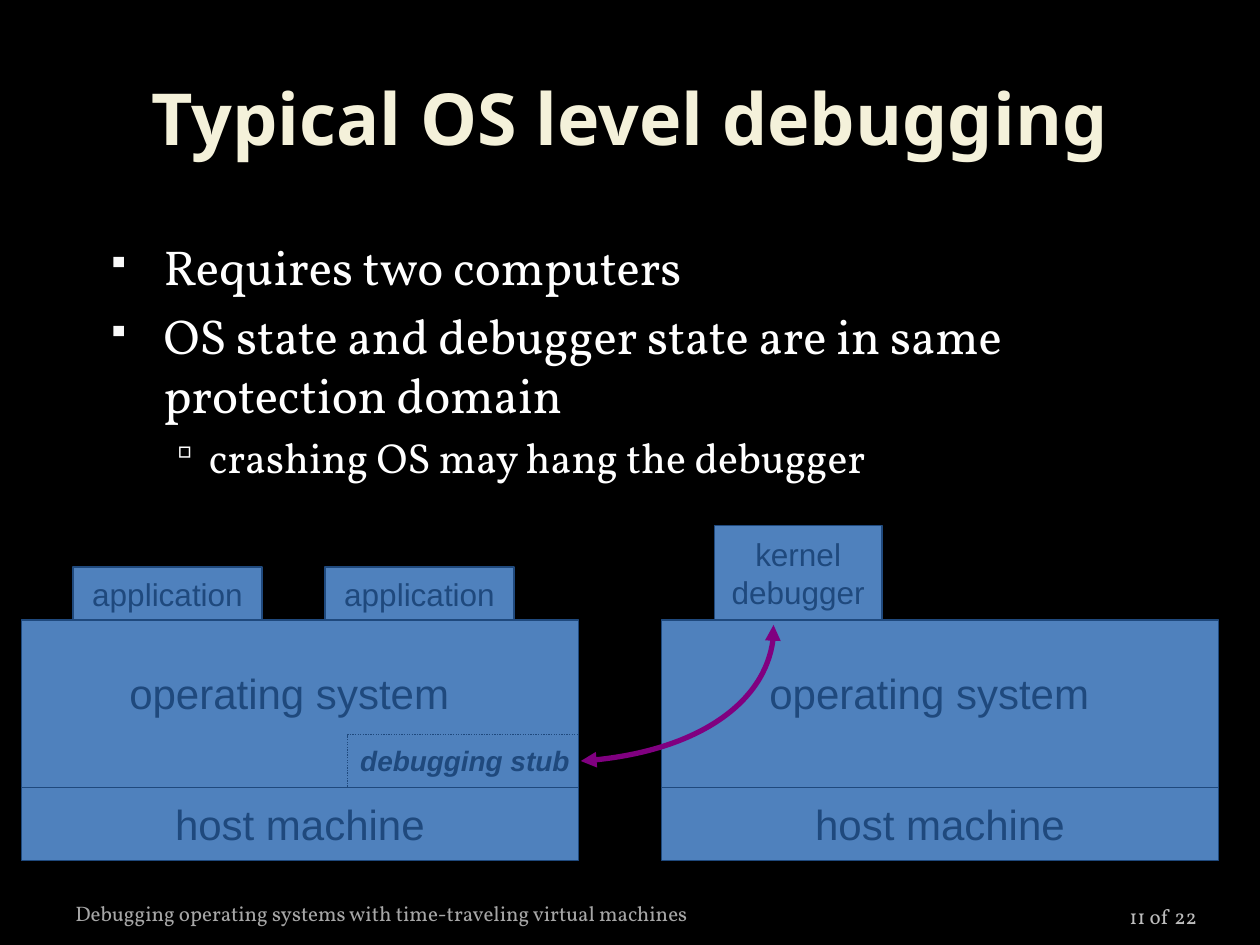
import pptx
import pptx.dml.color
import pptx.enum.dml
import pptx.enum.shapes
import pptx.enum.text
import pptx.oxml.ns
import pptx.oxml.xmlchemy
import pptx.util
from pptx.util import Inches, Pt

COLORS = {
    "background": "000000", "title": "F4F1DA", "body": "FFFFFF",
    "bullet": "F9F9F9", "box": "4F81BD", "ink": "1F497D",
    "arrow": "800080", "page": "BDBDBD", "footer": "A6A6A6",
}
ALIGN = pptx.enum.text.PP_ALIGN
ANCHOR = pptx.enum.text.MSO_ANCHOR

TITLE = "Typical OS level debugging"
FOOTER = "Debugging operating systems with time-traveling virtual machines"
PAGE = "11 of 22"
BULLETS = [
    ("Requires two computers", 0),
    ("OS state and debugger state are in same protection domain", 0),
    ("crashing OS may hang the debugger", 1),
]
LEVELS = [
    dict(size=28, left=0.45, hang=0.45, char="▪", color="bullet", percent=65),
    dict(size=24, left=0.81, hang=0.31, char="▫", color="body", percent=80),
]
MACHINES = [
    (0.17, [(0.41, 1.5, 0.42, ["application"]),
            (2.41, 1.5, 0.42, ["application"])]),
    (5.25, [(0.42, 1.33, 0.75, ["kernel", "debugger"])]),
]
MACHINE_W, OS_TOP, OS_H, HOST_H = 4.42, 4.92, 1.33, 0.58
STUB_W, STUB_H = 1.83, 0.42
ARROW_CURVE = [(4.61, 6.04), (5.49, 5.99), (6.17, 5.51), (6.14, 4.96)]


def rgb(name):
    return pptx.dml.color.RGBColor.from_string(COLORS[name])


def add_xml(parent, tag, **attrs):
    el = pptx.oxml.xmlchemy.OxmlElement(tag)
    for key, value in attrs.items():
        el.set(key, str(value))
    parent.append(el)
    return el


def add_run(p, text, size, font, color, bold=None, italic=None):
    r = p.add_run()
    r.text = text
    r.font.size, r.font.name = Pt(size), font
    r.font.bold, r.font.italic = bold, italic
    r.font.color.rgb = rgb(color)


def fill_text(tf, lines, size, font, color, align, anchor, wrap=True, **style):
    tf.word_wrap, tf.vertical_anchor = wrap, anchor
    for i, line in enumerate(lines):
        p = tf.add_paragraph() if i else tf.paragraphs[0]
        p.alignment = align
        add_run(p, line, size, font, color, **style)


def add_text(s, at, text, size, font, color, align=ALIGN.CENTER, anchor=ANCHOR.TOP, **style):
    tf = s.shapes.add_textbox(*map(Inches, at)).text_frame
    fill_text(tf, [text], size, font, color, align, anchor, **style)
    return tf


def add_box(s, at, lines=(), size=24, filled=True):
    kind = pptx.enum.shapes.MSO_SHAPE.RECTANGLE
    sp = s.shapes.add_shape(kind, *map(Inches, at))
    sp.shadow.inherit = False
    if filled:
        sp.fill.solid()
        sp.fill.fore_color.rgb = rgb("box")
    else:
        sp.fill.background()
    sp.line.color.rgb = rgb("ink")
    sp.line.width = Pt(0.75)
    fill_text(sp.text_frame, lines, size, "Arial", "ink", ALIGN.CENTER, ANCHOR.MIDDLE, wrap=False)
    return sp


def add_bullets(s):
    tf = s.shapes.add_textbox(*map(Inches, (0.75, 1.83, 8.5, 2))).text_frame
    tf.word_wrap = True
    for i, (text, depth) in enumerate(BULLETS):
        level = LEVELS[depth]
        p = tf.add_paragraph() if i else tf.paragraphs[0]
        p.level = depth
        p.space_before = Pt(level["size"] * 0.2)
        add_run(p, text, level["size"], "Vollkorn", "body")
        pPr = p._p.get_or_add_pPr()
        pPr.set("marL", str(Inches(level["left"])))
        pPr.set("indent", str(-Inches(level["hang"])))
        add_xml(add_xml(pPr, "a:buClr"), "a:srgbClr", val=COLORS[level["color"]])
        add_xml(pPr, "a:buSzPct", val=level["percent"] * 1000)
        add_xml(pPr, "a:buChar", char=level["char"])


def add_machine(s, left, programs):
    add_box(s, (left, OS_TOP + OS_H, MACHINE_W, HOST_H), ["host machine"])
    add_box(s, (left, OS_TOP, MACHINE_W, OS_H))
    for offset, width, height, lines in programs:
        add_box(s, (left + offset, OS_TOP - height, width, height), lines, 18)
    add_text(s, (left + 0.75, 5.25, 2.75, 0.5), "operating system", 24, "Arial", "ink")


def add_stub(s, left):
    x, y = left + MACHINE_W - STUB_W, OS_TOP + OS_H - STUB_H
    add_text(s, (x - 0.03, y + 0.02, 1.92, 0.37), "debugging stub", 16, "Arial", "ink",
             bold=True, italic=True)
    stub = add_box(s, (x, y, STUB_W, STUB_H), filled=False)
    stub.line.dash_style = pptx.enum.dml.MSO_LINE.ROUND_DOT


def add_curved_arrow(s, curve):
    points = [tuple(map(Inches, point)) for point in curve]
    builder = s.shapes.build_freeform(*points[0])
    builder.add_line_segments(points[1:], close=False)
    sp = builder.convert_to_shape()
    sp.shadow.inherit = False
    sp.fill.background()
    sp.line.color.rgb = rgb("arrow")
    sp.line.width = Pt(3)
    qn = pptx.oxml.ns.qn
    outline = next(sp._element.iter(qn("a:path")))
    segments = outline.findall(qn("a:lnTo"))
    bezier = add_xml(outline, "a:cubicBezTo")
    for segment in segments:
        bezier.append(segment[0])
        outline.remove(segment)
    ln = sp.line._get_or_add_ln()
    for end in ("a:headEnd", "a:tailEnd"):
        add_xml(ln, end, type="triangle")


def main():
    prs = pptx.Presentation()
    prs.slide_width, prs.slide_height = Inches(10), Inches(7.5)
    s = prs.slides.add_slide(prs.slide_layouts[6])
    s.background.fill.solid()
    s.background.fill.fore_color.rgb = rgb("background")

    add_text(s, (0.5, 0.3, 9, 1.25), TITLE, 41, "Noto Sans", "title",
             anchor=ANCHOR.MIDDLE, bold=True)
    add_bullets(s)
    for left, programs in MACHINES:
        add_machine(s, left, programs)
    add_stub(s, MACHINES[0][0])
    add_curved_arrow(s, ARROW_CURVE)

    page = add_text(s, (8.67, 7.02, 0.83, 0.4), PAGE, 12, "Vollkorn", "page",
                    ALIGN.RIGHT, ANCHOR.BOTTOM)
    page.margin_left = page.margin_right = 0
    add_text(s, (0.5, 7, 8, 0.4), FOOTER, 12, "Vollkorn", "footer",
             ALIGN.LEFT, ANCHOR.BOTTOM)
    prs.save("out.pptx")


if __name__ == "__main__":
    main()
